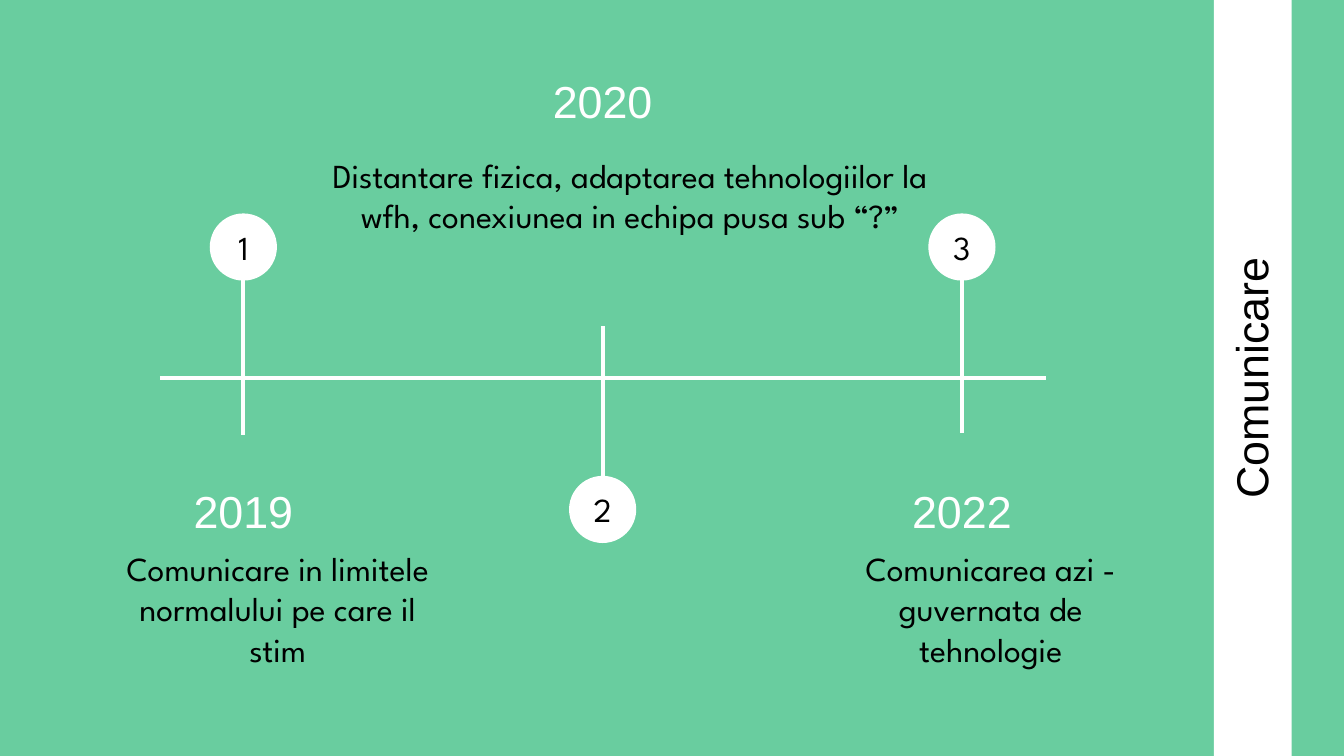
from pptx import Presentation
from pptx.dml.color import RGBColor
from pptx.enum.shapes import MSO_CONNECTOR, MSO_SHAPE
from pptx.enum.text import MSO_ANCHOR, MSO_AUTO_SIZE, PP_ALIGN
from pptx.oxml.ns import qn
from pptx.util import Cm, Pt
from lxml.etree import SubElement

GREEN, WHITE, BLACK = "69CD9F", "FFFFFF", "000000"
HEADING_FONT, BODY_FONT = "Arial", "League Spartan"
SLIDE_WIDTH, SLIDE_HEIGHT = 25.4, 14.29
AXIS_Y = 7.14
FIRST_CENTRE, STEP = 4.6, 6.79
DIAMETER = 1.27
YEAR_WIDTH, YEAR_HEIGHT = 4.85, 1.42

# number, year, description, circle middle, stem end, year top, (left, top, width) of description
MILESTONES = [
    ("1", "2019", "Comunicare in limitele normalului pe care il stim",
     4.67, 8.23, 8.99, (2.06, 10.11, 6.38)),
    ("2", "2020", "Distantare fizica, adaptarea tehnologiilor la wfh, conexiunea in echipa pusa sub “?”",
     9.63, 6.17, 1.24, (5.94, 2.67, 11.94)),
    ("3", "2022", "Comunicarea azi - guvernata de tehnologie",
     4.67, 8.18, 8.99, (15.65, 10.11, 6.15)),
]


def colour(value):
    """Return the colour for a hex string."""
    return RGBColor.from_string(value)


def write(shape, text, size, font, ink, anchor):
    """Put one centred, formatted paragraph into a shape."""
    frame = shape.text_frame
    frame.text = text
    frame.word_wrap = True
    frame.auto_size = MSO_AUTO_SIZE.NONE
    frame.vertical_anchor = anchor
    frame.margin_left = frame.margin_right = Cm(0.25)
    frame.margin_top = frame.margin_bottom = Cm(0.25)
    para = frame.paragraphs[0]
    para.alignment = PP_ALIGN.CENTER
    span = para.runs[0]
    span.font.size = Pt(size)
    span.font.name = font
    span.font.color.rgb = colour(ink)


def add_text(slide, left, top, width, height, *style):
    """Add a text box holding one paragraph."""
    box = slide.shapes.add_textbox(Cm(left), Cm(top), Cm(width), Cm(height))
    write(box, *style)


def add_white_shape(slide, kind, left, top, width, height):
    """Add a plain white shape without outline."""
    shape = slide.shapes.add_shape(kind, Cm(left), Cm(top), Cm(width), Cm(height))
    shape.shadow.inherit = False
    shape.fill.solid()
    shape.fill.fore_color.rgb = colour(WHITE)
    shape.line.fill.background()
    return shape


def add_line(slide, start_x, start_y, end_x, end_y):
    """Add a straight white line."""
    line = slide.shapes.add_connector(
        MSO_CONNECTOR.STRAIGHT, Cm(start_x), Cm(start_y), Cm(end_x), Cm(end_y))
    line.line.color.rgb = colour(WHITE)
    line.line.width = Pt(2.25)
    SubElement(line._element.spPr, qn("a:effectLst"))


def place_title(slide, text):
    """Turn the title placeholder upright along the side band."""
    title = slide.shapes.title
    title.left, title.top = Cm(11.84), Cm(6.35)
    title.width, title.height = Cm(23.67), Cm(1.6)
    title.rotation = 270
    write(title, text, 24, HEADING_FONT, BLACK, MSO_ANCHOR.TOP)


def add_milestone(slide, centre, number, year, description, middle, stem_end, year_top, area):
    """Add a stem, its numbered circle, the year and the description."""
    add_line(slide, centre, middle, centre, stem_end)
    circle = add_white_shape(slide, MSO_SHAPE.OVAL, centre - DIAMETER / 2,
                             middle - DIAMETER / 2, DIAMETER, DIAMETER)
    write(circle, number, 18, BODY_FONT, BLACK, MSO_ANCHOR.MIDDLE)
    add_text(slide, centre - YEAR_WIDTH / 2, year_top, YEAR_WIDTH, YEAR_HEIGHT,
             year, 24, HEADING_FONT, WHITE, MSO_ANCHOR.BOTTOM)
    add_text(slide, *area, 2.08, description, 18, BODY_FONT, BLACK, MSO_ANCHOR.TOP)


def main():
    """Build the timeline slide and save the deck."""
    deck = Presentation()
    deck.slide_width, deck.slide_height = Cm(SLIDE_WIDTH), Cm(SLIDE_HEIGHT)
    page = deck.slides.add_slide(deck.slide_layouts[5])
    page.background.fill.solid()
    page.background.fill.fore_color.rgb = colour(GREEN)
    band = add_white_shape(page, MSO_SHAPE.RECTANGLE, 22.94, 0, 1.47, SLIDE_HEIGHT)
    page.shapes.title._element.addprevious(band._element)
    place_title(page, "Comunicare")
    add_line(page, 3.02, AXIS_Y, 19.76, AXIS_Y)
    for index, milestone in enumerate(MILESTONES):
        add_milestone(page, FIRST_CENTRE + index * STEP, *milestone)
    deck.save("out.pptx")


if __name__ == "__main__":
    main()
